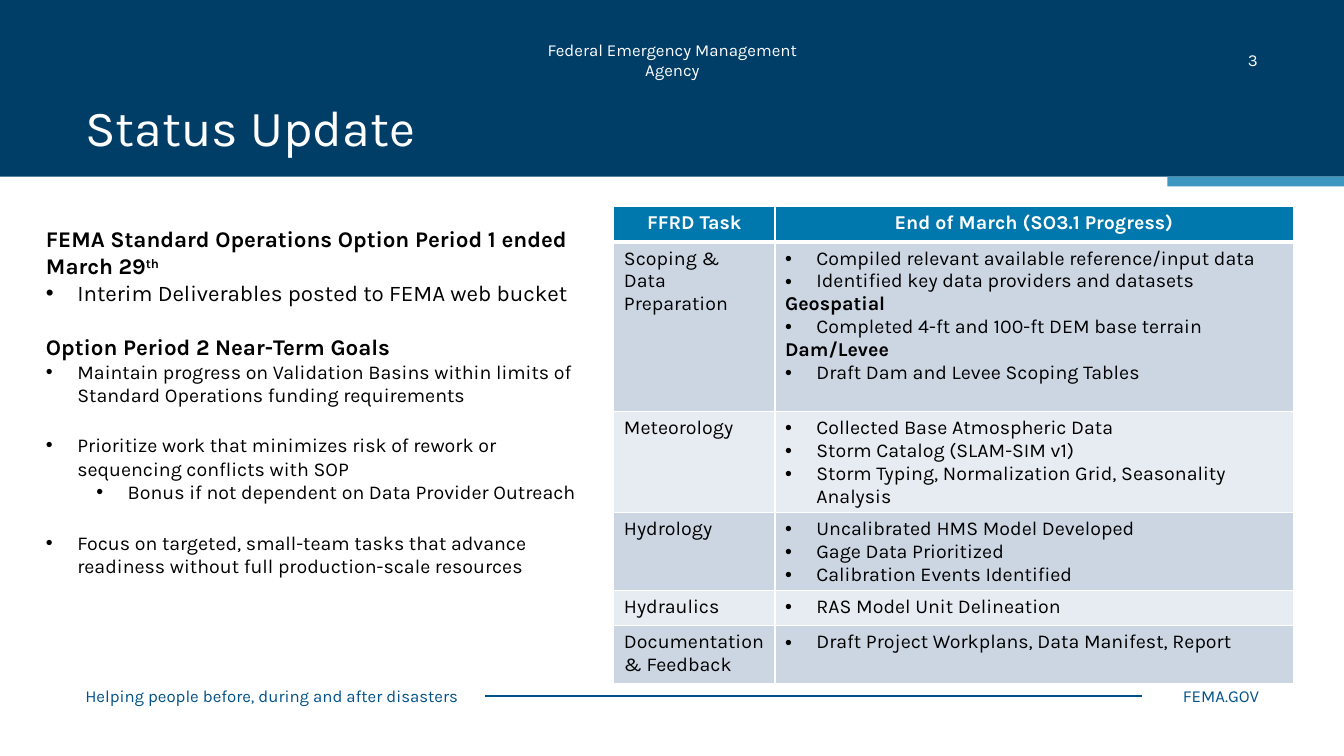
from dataclasses import dataclass

from lxml import etree
from pptx import Presentation
from pptx import util as u
from pptx.dml.color import RGBColor
from pptx.enum import shapes, text
from pptx.oxml import ns

LEFT, MID, RIGHT = text.PP_ALIGN.LEFT, text.PP_ALIGN.CENTER, text.PP_ALIGN.RIGHT
HANG = 0.79


@dataclass(frozen=True)
class Theme:
    face: str = "Karla"
    white: str = "FFFFFF"
    black: str = "000000"
    navy: str = "003D67"
    blue: str = "005188"
    sky: str = "3D98C1"
    head: str = "0078AE"
    bands: tuple = ("CCD6E3", "E7ECF2")
    title: int = 36
    lead: int = 16
    body: int = 14
    small: int = 12


def child(node, tag, **attrs):
    return etree.SubElement(node, ns.qn(tag), **attrs)


class Deck:
    def __init__(self, theme):
        self.theme = theme
        self.prs = Presentation()
        self.prs.slide_width, self.prs.slide_height = u.Cm(33.87), u.Cm(19.05)
        self.slide = self.prs.slides.add_slide(self.prs.slide_layouts[6])

    def rect(self, x, y, w, h, color):
        shape = self.slide.shapes.add_shape(
            shapes.MSO_SHAPE.RECTANGLE, *map(u.Cm, (x, y, w, h)))
        shape.shadow.inherit = False
        shape.fill.solid()
        shape.fill.fore_color.rgb = RGBColor.from_string(color)
        shape.line.fill.background()

    def line(self, x, y, end, color, width):
        """Draw a level line from x to end."""
        line = self.slide.shapes.add_connector(
            shapes.MSO_CONNECTOR.STRAIGHT, *map(u.Cm, (x, y, end, y)))
        line.line.color.rgb = RGBColor.from_string(color)
        line.line.width = u.Pt(width)
        child(line._element.spPr, "a:effectLst")

    def box(self, x, y, w, h, middle=False):
        """Add a wrapping text box and return its frame."""
        frame = self.slide.shapes.add_textbox(*map(u.Cm, (x, y, w, h))).text_frame
        frame.word_wrap = True
        if middle:
            frame.vertical_anchor = text.MSO_ANCHOR.MIDDLE
        return frame

    def para(self, frame, words, size, color, bold=False, align=LEFT,
             left=0, gap=0, lead=None, raised=""):
        """Add a paragraph; a left indent makes it a bullet, raised is superscript."""
        para = frame.paragraphs[0]
        if para.runs:
            para = frame.add_paragraph()
        para.alignment = align
        if gap:
            para.space_before = u.Pt(gap)
        if lead:
            para.line_spacing = u.Pt(lead)
        if left:
            props = para._p.get_or_add_pPr()
            props.set("marL", str(u.Cm(left)))
            props.set("indent", str(-u.Cm(HANG)))
            child(props, "a:buFont", typeface="Arial")
            child(props, "a:buChar", char="•")
        for part in filter(None, (words, raised)):
            run = para.add_run()
            run.text = part
            font = run.font
            font.name, font.size, font.bold = self.theme.face, u.Pt(size), bold
            font.color.rgb = RGBColor.from_string(color)
        if raised:
            run._r.get_or_add_rPr().set("baseline", "30000")

    def label(self, words, x, y, w, h, size, color, align=LEFT, middle=True, lead=None):
        self.para(self.box(x, y, w, h, middle), words, size, color,
                  align=align, lead=lead)

    def cell(self, cell, fill, top=1, base=1):
        """Fill a cell and give it white borders, top and base in points."""
        props = cell._tc.get_or_add_tcPr()
        for side, width in zip("LRTB", (1, 1, top, base)):
            edge = child(props, "a:ln" + side, w=str(u.Pt(width)))
            child(child(edge, "a:solidFill"), "a:srgbClr", val=self.theme.white)
        cell.fill.solid()
        cell.fill.fore_color.rgb = RGBColor.from_string(fill)
        cell.margin_bottom = u.Cm(0.03)

    def table(self, x, y, widths, heights, heads, tasks):
        """Tasks hold a name and lines; a line in a tuple is a bold heading."""
        th = self.theme
        grid = self.slide.shapes.add_table(
            len(heights), len(widths),
            *map(u.Cm, (x, y, sum(widths), sum(heights)))).table
        for col, width in zip(grid.columns, widths):
            col.width = u.Cm(width)
        for row, height in zip(grid.rows, heights):
            row.height = u.Cm(height)
        for cell, words in zip(grid.rows[0].cells, heads):
            self.cell(cell, th.head, base=3)
            self.para(cell.text_frame, words, th.body, th.white, True, MID)
        for num, (name, lines) in enumerate(tasks):
            task, work = grid.rows[num + 1].cells
            for cell in (task, work):
                self.cell(cell, th.bands[num % 2], top=1 if num else 3)
            self.para(task.text_frame, name, th.body, th.black)
            for item in lines:
                bold = isinstance(item, tuple)
                self.para(work.text_frame, item[0] if bold else item, th.body,
                          th.black, bold, left=0 if bold else HANG)


HEADS = ("FFRD Task", "End of March (SO3.1 Progress)")
TASKS = [
    ("Scoping & Data Preparation", [
        "Compiled relevant available reference/input data",
        "Identified key data providers and datasets",
        ("Geospatial",),
        "Completed 4-ft and 100-ft DEM base terrain",
        ("Dam/Levee",),
        "Draft Dam and Levee Scoping Tables"]),
    ("Meteorology", [
        "Collected Base Atmospheric Data",
        "Storm Catalog (SLAM-SIM v1)",
        "Storm Typing, Normalization Grid, Seasonality Analysis"]),
    ("Hydrology", [
        "Uncalibrated HMS Model Developed",
        "Gage Data Prioritized",
        "Calibration Events Identified"]),
    ("Hydraulics", ["RAS Model Unit Delineation"]),
    ("Documentation & Feedback", ["Draft Project Workplans, Data Manifest, Report"]),
]


def main():
    th = Theme()
    deck = Deck(th)
    deck.rect(0, 0, 33.87, 4.45, th.navy)
    deck.label("Federal Emergency Management Agency", 12.88, 1.12, 8.13, 0.76,
               th.small, th.white, MID)
    deck.label("Helping people before, during and after disasters",
               1.9, 17.16, 10.67, 0.76, th.small, th.blue)
    deck.label("FEMA.GOV", 29.44, 17.16, 2.54, 0.76, th.small, th.blue, RIGHT)
    deck.line(12.22, 17.53, 28.78, th.blue, 1.5)
    deck.rect(29.42, 4.45, 4.45, 0.25, th.sky)
    deck.label("Status Update", 1.9, 2.54, 30.07, 1.27, th.title, th.white, lead=44)
    deck.label("3", 29.41, 1.12, 2.54, 0.76, th.small, th.white, RIGHT, middle=False)
    deck.table(15.47, 5.21, (4.06, 13.06), (0.89, 4.27, 2.55, 1.96, 0.89, 1.47),
               HEADS, TASKS)

    goals = deck.box(0.91, 5.56, 13.87, 10.01)
    deck.para(goals, "FEMA Standard Operations Option Period 1 ended March 29",
              th.lead, th.black, True, raised="th")
    deck.para(goals, "Interim Deliverables posted to FEMA web bucket",
              th.lead, th.black, left=HANG)
    deck.para(goals, "Option Period 2 Near-Term Goals", th.lead, th.black, True, gap=19)
    for words, left, gap in (
        ("Maintain progress on Validation Basins within limits of "
         "Standard Operations funding requirements", HANG, 0),
        ("Prioritize work that minimizes risk of rework or "
         "sequencing conflicts with SOP", HANG, 19),
        ("Bonus if not dependent on Data Provider Outreach", 2.06, 0),
        ("Focus on targeted, small-team tasks that advance "
         "readiness without full production-scale resources", HANG, 19),
    ):
        deck.para(goals, words, th.body, th.black, left=left, gap=gap)
    deck.prs.save("out.pptx")


if __name__ == "__main__":
    main()
